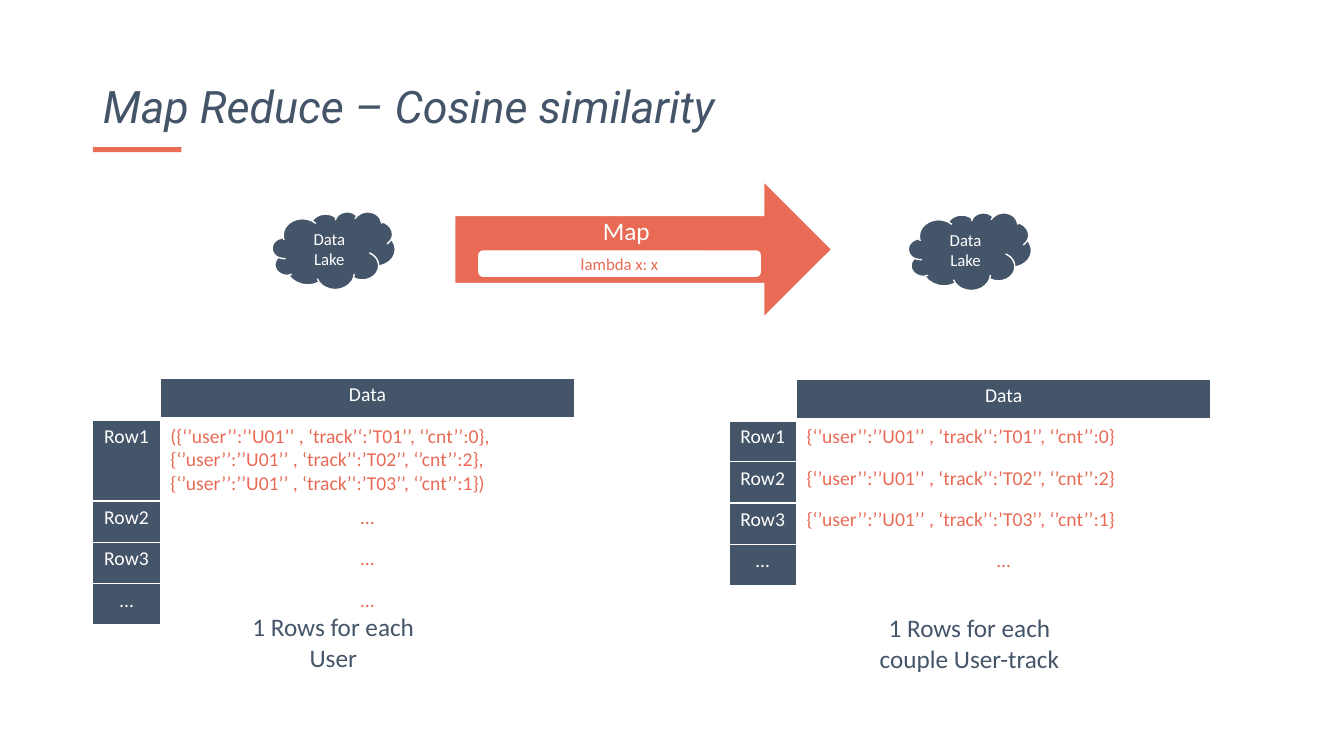
from lxml.etree import SubElement
from pptx import Presentation
from pptx.dml.color import RGBColor
from pptx.enum.shapes import MSO_SHAPE as Shape
from pptx.enum.text import MSO_ANCHOR as Anchor, MSO_AUTO_SIZE as Fit, PP_ALIGN as Align
from pptx.oxml.ns import qn
from pptx.util import Inches, Pt

NAVY = RGBColor(0x44, 0x54, 0x69)
CORAL = RGBColor(0xE9, 0x6B, 0x56)
WHITE = RGBColor(0xFF, 0xFF, 0xFF)

TITLE = "Map Reduce – Cosine similarity"
TRACKS = [
    "{‘’user’’:’’U01’’ , ‘track’‘:’T01’’, ‘’cnt’’:0}",
    "{‘’user’’:’’U01’’ , ‘track’‘:’T02’’, ‘’cnt’’:2}",
    "{‘’user’’:’’U01’’ , ‘track’‘:’T03’’, ‘’cnt’’:1}",
]
HEADS = ["", "Row1", "Row2", "Row3", "…"]
SIDES = [
    {"left": 0.92, "top": 3.75, "first": 0.79, "note": "1 Rows for each User",
     "data": ["Data", f"({', '.join(TRACKS)})", "…", "…", "…"]},
    {"left": 7.23, "top": 3.76, "first": 0.41, "note": "1 Rows for each couple User-track",
     "data": ["Data", *TRACKS, "…"]},
]
WIDTHS = (0.67, 4.11)
ROW = 0.41


def box(x, y, w, h):
    return [Inches(n) for n in (x, y, w, h)]


def write(frame, text, size, color, align=Align.CENTER, font="Calibri", italic=False):
    frame.text = text
    for para in frame.paragraphs:
        para.alignment = align
        for run in para.runs:
            run.font.size = Pt(size)
            run.font.name = font
            run.font.color.rgb = color
            run.font.bold = False
            run.font.italic = italic


def draw(shapes, kind, place, fill, line=WHITE):
    shape = shapes.add_shape(kind, *box(*place))
    shape.shadow.inherit = False
    shape.fill.solid()
    shape.fill.fore_color.rgb = fill
    if line is None:
        shape.line.fill.background()
    else:
        shape.line.color.rgb = line
        shape.line.width = Pt(1)
    return shape


def edge(cell, row):
    props = cell._tc.get_or_add_tcPr()
    thick = {"T": row == 1, "B": row == 0}
    for side in "LRTB":
        width = Pt(3 if thick.get(side) else 1)
        line = SubElement(props, qn(f"a:ln{side}"), w=str(width))
        fill = SubElement(line, qn("a:solidFill"))
        SubElement(fill, qn("a:srgbClr"), val=str(WHITE))


def add_grid(shapes, side):
    place = box(side["left"], side["top"], sum(WIDTHS), 4 * ROW + side["first"])
    grid = shapes.add_table(len(HEADS), len(WIDTHS), *place).table
    grid.first_row = grid.horz_banding = False
    for col, width in zip(grid.columns, WIDTHS):
        col.width = Inches(width)
    for i, pair in enumerate(zip(HEADS, side["data"])):
        grid.rows[i].height = Inches(side["first"] if i == 1 else ROW)
        for j, text in enumerate(pair):
            cell = grid.cell(i, j)
            dark = (i == 0) != (j == 0)
            edge(cell, i)
            if dark:
                cell.fill.solid()
                cell.fill.fore_color.rgb = NAVY
            else:
                cell.fill.background()
            align = Align.CENTER if dark or text == "…" else Align.LEFT
            write(cell.text_frame, text, 14, WHITE if dark else CORAL, align)


def add_side(shapes, side):
    add_grid(shapes, side)
    cloud = draw(shapes, Shape.CLOUD, (side["left"] + 1.78, side["top"] - 1.65, 1.22, 0.77), NAVY)
    cloud.text_frame.vertical_anchor = Anchor.MIDDLE
    write(cloud.text_frame, "Data Lake", 12, WHITE)
    note = shapes.add_textbox(*box(side["left"] + 1.28, side["top"] + 2.27, 2.21, 0.71)).text_frame
    note.word_wrap = True
    note.auto_size = Fit.SHAPE_TO_FIT_TEXT
    write(note, side["note"], 18, NAVY)


def add_title(shapes):
    title = shapes.title
    title.left, title.top, title.width, title.height = box(0.92, 0.18, 11.5, 1.19)
    frame = title.text_frame
    frame.auto_size = Fit.NONE
    frame.vertical_anchor = Anchor.BOTTOM
    write(frame, TITLE, 32, NAVY, Align.LEFT, "Roboto", True)
    frame.paragraphs[0].line_spacing = 0.9
    draw(shapes, Shape.RECTANGLE, (0.92, 1.46, 0.88, 0.05), CORAL, None)


def add_map(shapes):
    group = shapes.add_group_shape().shapes
    arrow = draw(group, Shape.RIGHT_ARROW, (4.51, 1.8, 3.74, 1.35), CORAL)
    arrow.text_frame.margin_top = 0
    arrow.text_frame.vertical_anchor = Anchor.TOP
    write(arrow.text_frame, "Map", 18, WHITE)
    code = draw(group, Shape.ROUNDED_RECTANGLE, (4.75, 2.49, 2.79, 0.25), WHITE)
    code.text_frame.vertical_anchor = Anchor.MIDDLE
    write(code.text_frame, "lambda x: x", 12, CORAL)


def main():
    deck = Presentation()
    deck.slide_width, deck.slide_height = Inches(13.33), Inches(7.5)
    shapes = deck.slides.add_slide(deck.slide_layouts[5]).shapes
    add_title(shapes)
    add_map(shapes)
    for side in SIDES:
        add_side(shapes, side)
    deck.save("out.pptx")


if __name__ == "__main__":
    main()
